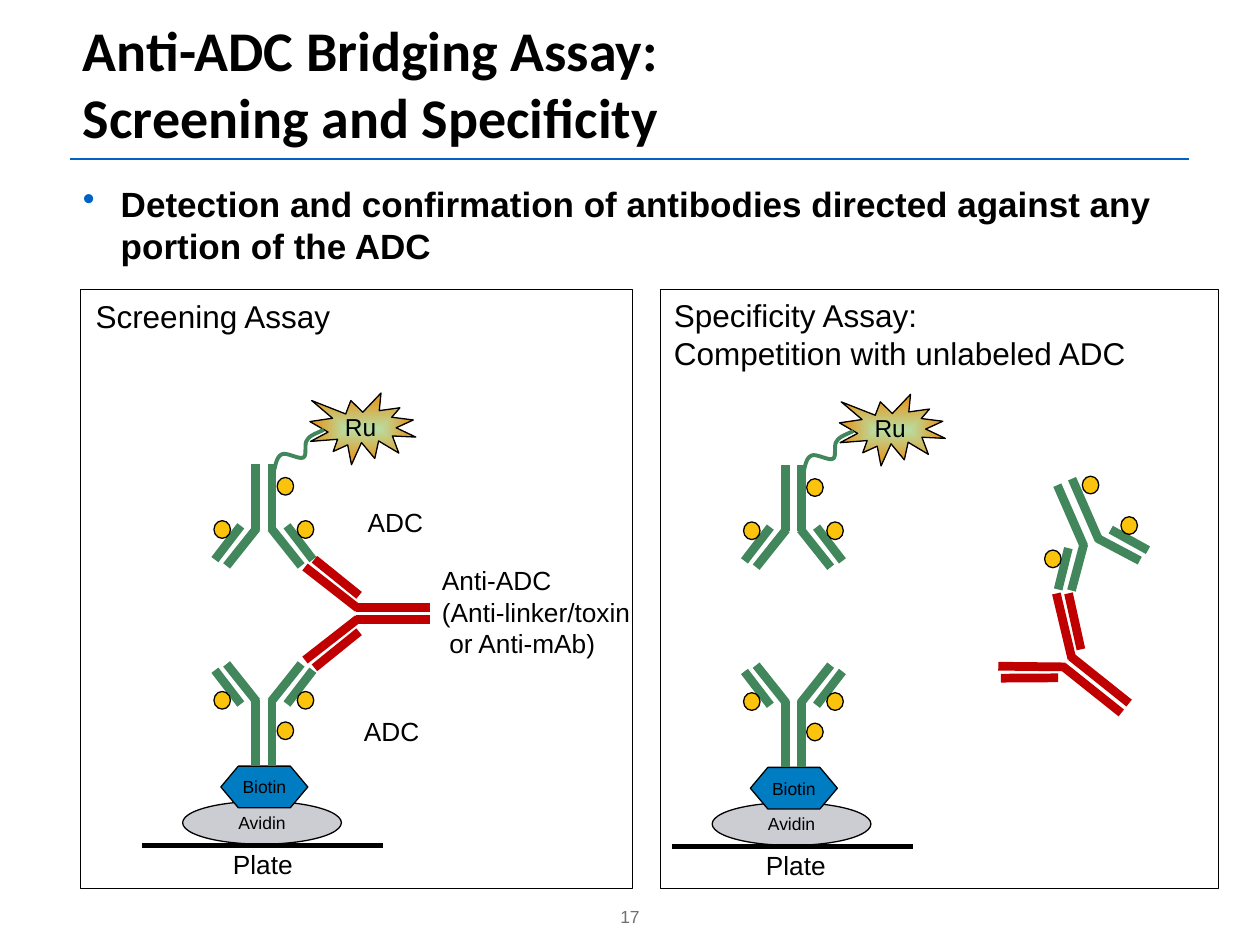
from dataclasses import dataclass
from math import cos, radians, sin

from lxml import etree
from pptx import Presentation
from pptx.dml.color import RGBColor
from pptx.enum.shapes import MSO_CONNECTOR, MSO_SHAPE
from pptx.enum.text import MSO_ANCHOR, PP_ALIGN
from pptx.oxml.ns import qn
from pptx.util import Pt

STRAIGHT = MSO_CONNECTOR.STRAIGHT
OVAL = MSO_SHAPE.OVAL
HEXAGON = MSO_SHAPE.HEXAGON
BURST = MSO_SHAPE.EXPLOSION1
RECTANGLE = MSO_SHAPE.RECTANGLE
TOP, MIDDLE, BOTTOM = MSO_ANCHOR.TOP, MSO_ANCHOR.MIDDLE, MSO_ANCHOR.BOTTOM
LEFT, CENTER = PP_ALIGN.LEFT, PP_ALIGN.CENTER

BLACK, GREEN, RED, YELLOW = "000000", "42865C", "C00000", "FCC30C"
BLUE, GRAY, ACCENT, MUTED = "007CC2", "CBCDD2", "0063C3", "716F73"
SEAL_CENTER, SEAL_EDGE = "B8DDA3", "EC8D0E"

Point = tuple[float, float]
Box = tuple[float, float, float, float]


@dataclass(frozen=True)
class TextStyle:
    size: float
    color: str = BLACK
    name: str = "Arial"
    bold: bool = False
    align: PP_ALIGN = LEFT
    anchor: MSO_ANCHOR = TOP
    wrap: bool = False
    side_margin: float = 7.2


@dataclass(frozen=True)
class Label:
    text: str
    box: Box
    style: TextStyle


@dataclass(frozen=True)
class Antibody:
    color: str
    strands: tuple[tuple[Point, Point], ...]
    toxin: Point | None = None


ADC = Antibody(
    GREEN,
    (((4.6, 0), (4.6, 38)), ((4.1, 36.8), (21.3, 58.4)), ((13.2, 35.5), (28, 54.8))),
    (23.8, 37.6),
)
ANTI_ADC = Antibody(
    RED,
    (((3.6, 0), (3.6, 42.6)), ((3, 41.4), (26.6, 71.6)), ((10.4, 40.7), (31, 66.2))),
)

TITLE = TextStyle(32, name="Calibri", bold=True, anchor=BOTTOM, wrap=True)
BODY = TextStyle(20, bold=True, wrap=True)
HEADING = TextStyle(18)
LABEL = TextStyle(15)
RUTHENIUM = TextStyle(14, anchor=MIDDLE)
REAGENT = TextStyle(10, align=CENTER, anchor=MIDDLE, side_margin=0)
PAGE_NUMBER = TextStyle(10, MUTED, align=CENTER, anchor=BOTTOM, wrap=True)

LABELS = (
    Label("17", (285, 504.7, 150, 28.8), PAGE_NUMBER),
    Label("Anti-ADC Bridging Assay:\vScreening and Specificity", (40.3, 2.9, 639.4, 86.4), TITLE),
    Label("Anti-ADC\n(Anti-linker/toxin\n or Anti-mAb)", (245.5, 319, 127.4, 62), LABEL),
    Label("ADC", (200.9, 405.4, 50.4, 27.4), LABEL),
    Label("ADC", (203, 285.8, 50.4, 27.4), LABEL),
    Label("Plate", (126, 481, 49, 25.2), LABEL),
    Label("Plate", (430.6, 481.7, 49, 25.2), LABEL),
    Label("Screening Assay", (47.5, 166.3, 149.8, 28.8), HEADING),
    Label("Specificity Assay:\nCompetition with unlabeled ADC", (378, 165.6, 280.8, 51), HEADING),
)
PANELS = ((46, 165.6, 315.4, 342), (377.3, 165.6, 319, 342))
ASSAY_ORIGINS = ((0, 0), (302.6, 0.72))
LINKER_START = (156.2, 270.7)
LINKER_CURVES = (
    ((157, 268.6), (157.7, 261.4), (160.6, 259.9)),
    ((163.4, 257.8), (170.6, 262.8), (173.5, 261.4)),
    ((175.7, 259.9), (173.5, 253.4), (175.7, 251.3)),
    ((177.1, 248.4), (182.9, 247), (185, 245.5)),
)
CURVE_STEPS = 12


def hex_color(value: str) -> RGBColor:
    return RGBColor.from_string(value)


def apply(target, values: dict) -> None:
    for name, value in values.items():
        setattr(target, name, value)


def write_text(shape, text: str, style: TextStyle) -> None:
    frame = shape.text_frame
    frame.text = text
    margin = Pt(style.side_margin)
    apply(frame, {"word_wrap": style.wrap, "vertical_anchor": style.anchor,
                  "margin_left": margin, "margin_right": margin})
    for paragraph in frame.paragraphs:
        paragraph.alignment = style.align
        apply(paragraph.font, {"size": Pt(style.size), "name": style.name, "bold": style.bold})
        paragraph.font.color.rgb = hex_color(style.color)


def draw_label(slide, label: Label):
    shape = slide.shapes.add_textbox(*map(Pt, label.box))
    write_text(shape, label.text, label.style)
    return shape


def draw_bullet(slide, label: Label) -> None:
    paragraph = draw_label(slide, label).text_frame.paragraphs[0]
    properties = paragraph._p.get_or_add_pPr()
    properties.set("marL", str(Pt(21.6)))
    properties.set("indent", str(Pt(-21.6)))
    bullet_color = etree.SubElement(properties, qn("a:buClr"))
    etree.SubElement(bullet_color, qn("a:srgbClr"), val=ACCENT)
    etree.SubElement(properties, qn("a:buChar"), char="•")
    for element in properties.findall(qn("a:defRPr")):
        properties.append(element)


def draw_line(slide, start: Point, end: Point, color: str, width: float) -> None:
    connector = slide.shapes.add_connector(STRAIGHT, *map(Pt, (*start, *end)))
    connector.line.color.rgb = hex_color(color)
    connector.line.width = Pt(width)
    etree.SubElement(connector._element.spPr, qn("a:effectLst"))


def draw_shape(slide, kind, box: Box, fill: str | None = None):
    shape = slide.shapes.add_shape(kind, *map(Pt, box))
    shape.shadow.inherit = False
    if fill:
        shape.fill.solid()
        shape.fill.fore_color.rgb = hex_color(fill)
    else:
        shape.fill.background()
    shape.line.color.rgb = hex_color(BLACK)
    shape.line.width = Pt(0.75)
    return shape


def draw_toxin(slide, center: Point) -> None:
    draw_shape(slide, OVAL, (center[0] - 4.7, center[1] - 5.05, 9.4, 10.1), YELLOW)


def draw_antibody(slide, antibody: Antibody, stem_end: Point, angle: float) -> None:
    cosine, sine = cos(radians(angle)), sin(radians(angle))

    def place(point: Point, side: int) -> Point:
        across, along = side * point[0], point[1]
        return (stem_end[0] + across * cosine - along * sine,
                stem_end[1] + across * sine + along * cosine)

    for side in (-1, 1):
        for start, end in antibody.strands:
            draw_line(slide, place(start, side), place(end, side), antibody.color, 5)
        if antibody.toxin:
            draw_toxin(slide, place(antibody.toxin, side))


def draw_seal(slide, box: Box) -> None:
    seal = draw_shape(slide, BURST, box)
    seal.fill.gradient()
    for stop, color in zip(seal.fill.gradient_stops, (SEAL_CENTER, SEAL_EDGE)):
        stop.color.rgb = hex_color(color)
    gradient = seal._element.spPr.find(qn("a:gradFill"))
    gradient.remove(gradient.find(qn("a:lin")))
    shading = etree.SubElement(gradient, qn("a:path"), {"path": "shape"})
    etree.SubElement(shading, qn("a:fillToRect"), dict.fromkeys("ltrb", "50000"))
    write_text(seal, "Ru", RUTHENIUM)


def draw_linker(slide, dx: float, dy: float) -> None:
    points, start = [], LINKER_START
    for first, second, end in LINKER_CURVES:
        for step in range(1, CURVE_STEPS + 1):
            t = step / CURVE_STEPS
            weights = ((1 - t) ** 3, 3 * t * (1 - t) ** 2, 3 * t * t * (1 - t), t ** 3)
            x, y = (sum(w * p[axis] for w, p in zip(weights, (start, first, second, end)))
                    for axis in (0, 1))
            points.append((Pt(x + dx), Pt(y + dy)))
        start = end
    builder = slide.shapes.build_freeform(Pt(LINKER_START[0] + dx), Pt(LINKER_START[1] + dy))
    builder.add_line_segments(points, close=False)
    linker = builder.convert_to_shape()
    linker.shadow.inherit = False
    linker.fill.background()
    linker.line.color.rgb = hex_color(GREEN)
    linker.line.width = Pt(2.25)


def draw_assay(slide, dx: float, dy: float) -> None:
    draw_seal(slide, (177.1 + dx, 224.6 + dy, 60.5, 41))
    draw_linker(slide, dx, dy)
    avidin = draw_shape(slide, OVAL, (104.4 + dx, 457.9 + dy, 90.7, 24.5), GRAY)
    write_text(avidin, "Avidin", REAGENT)
    biotin = draw_shape(slide, HEXAGON, (126.2 + dx, 437.8 + dy, 49.7, 23.8), BLUE)
    biotin.adjustments[0] = 0.42
    write_text(biotin, "Biotin", REAGENT)
    draw_line(slide, (81.4 + dx, 483.1 + dy), (218.9 + dx, 483.1 + dy), BLACK, 3)
    for stem_y, toxin_y, angle in ((265, 277.9, 0), (437.8, 417.6, 180)):
        draw_antibody(slide, ADC, (150.8 + dx, stem_y + dy), angle)
        draw_toxin(slide, (163.1 + dx, toxin_y + dy))


def main() -> None:
    presentation = Presentation()
    apply(presentation, {"slide_width": Pt(720), "slide_height": Pt(540)})
    slide = presentation.slides.add_slide(presentation.slide_layouts[6])
    draw_line(slide, (40.3, 90.7), (679.7, 90.7), ACCENT, 1)
    for label in LABELS:
        draw_label(slide, label)
    draw_bullet(slide, Label(
        "Detection and confirmation of antibodies directed against any portion of the ADC",
        (40.3, 100.8, 639.4, 55.4), BODY))
    for origin in ASSAY_ORIGINS:
        draw_assay(slide, *origin)
    draw_antibody(slide, ANTI_ADC, (245.9, 350.6), 90)
    draw_antibody(slide, ANTI_ADC, (643, 404.6), 128.6)
    draw_antibody(slide, ADC, (608.4, 275.4), -23.6)
    draw_toxin(slide, (623.2, 277.2))
    for panel in PANELS:
        draw_shape(slide, RECTANGLE, panel)
    presentation.save("out.pptx")


if __name__ == "__main__":
    main()
